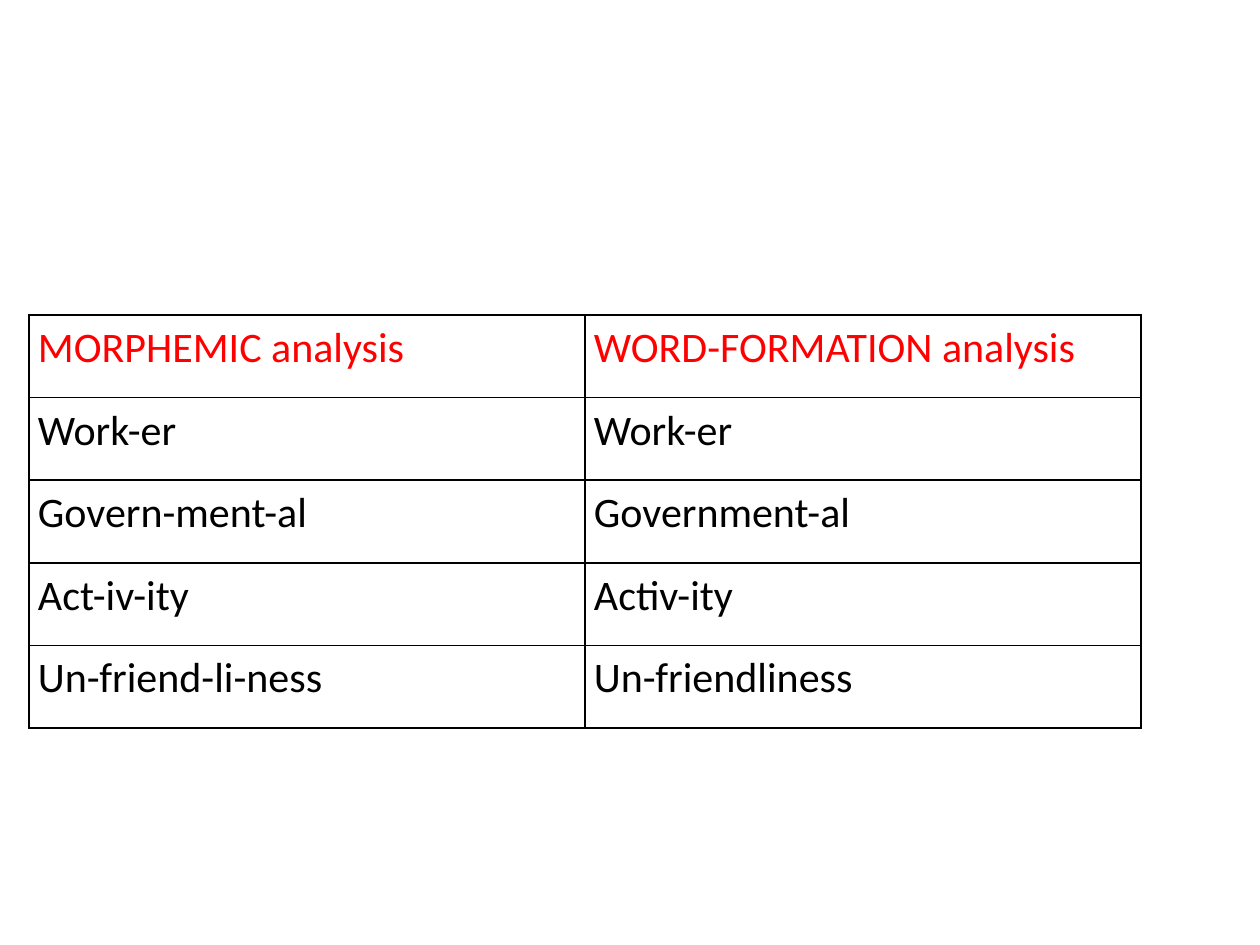
from typing import NamedTuple

from lxml.etree import SubElement
from pptx import Presentation
from pptx.dml.color import RGBColor
from pptx.enum.text import MSO_ANCHOR as Anchor
from pptx.oxml.ns import qn
from pptx.util import Inches, Pt

PX = Inches(1) // 126
RED = RGBColor(0xFF, 0x00, 0x00)
BLACK = RGBColor(0x00, 0x00, 0x00)
CELL_FORMAT = {
    "margin_left": 9 * PX,
    "margin_right": 9 * PX,
    "margin_top": 0,
    "margin_bottom": 0,
    "vertical_anchor": Anchor.TOP,
}
FONT_FORMAT = {"name": "Calibri", "size": Pt(24), "bold": False}


class Area(NamedTuple):
    left: int
    top: int
    width: int
    height: int


class Analysis(NamedTuple):
    morphemic: str
    word_formation: str
    color: RGBColor = BLACK


TABLE_AREA = Area(29, 315, 1112, 413)
ANALYSES = [
    Analysis("MORPHEMIC analysis", "WORD-FORMATION analysis", RED),
    Analysis("Work-er", "Work-er"),
    Analysis("Govern-ment-al", "Government-al"),
    Analysis("Act-iv-ity", "Activ-ity"),
    Analysis("Un-friend-li-ness", "Un-friendliness"),
]


def set_values(target, values: dict) -> None:
    for name, value in values.items():
        setattr(target, name, value)


def add_borders(cell, color: RGBColor, width: int) -> None:
    properties = cell._tc.get_or_add_tcPr()
    for side in ("a:lnL", "a:lnR", "a:lnT", "a:lnB"):
        line = SubElement(properties, qn(side), w=str(width))
        fill = SubElement(line, qn("a:solidFill"))
        SubElement(fill, qn("a:srgbClr"), val=str(color))


def write_cell(cell, text: str, color: RGBColor) -> None:
    set_values(cell, CELL_FORMAT)
    add_borders(cell, BLACK, Pt(1))
    cell.fill.background()
    para = cell.text_frame.paragraphs[0]
    para.line_spacing = 1.15
    span = para.add_run()
    span.text = text
    set_values(span.font, FONT_FORMAT)
    span.font.color.rgb = color


def add_analysis_table(page, area: Area, analyses: list[Analysis]) -> None:
    frame = page.shapes.add_table(len(analyses), 2, *(length * PX for length in area))
    table = frame.table
    set_values(table, {"first_row": False, "horz_banding": False})
    for row, analysis in zip(table.rows, analyses):
        for cell, text in zip(row.cells, analysis[:2]):
            write_cell(cell, text, analysis.color)


def main() -> None:
    deck = Presentation()
    set_values(deck, {"slide_width": Inches(10), "slide_height": Inches(7.5)})
    page = deck.slides.add_slide(deck.slide_layouts[6])
    add_analysis_table(page, TABLE_AREA, ANALYSES)
    deck.save("out.pptx")


if __name__ == "__main__":
    main()
